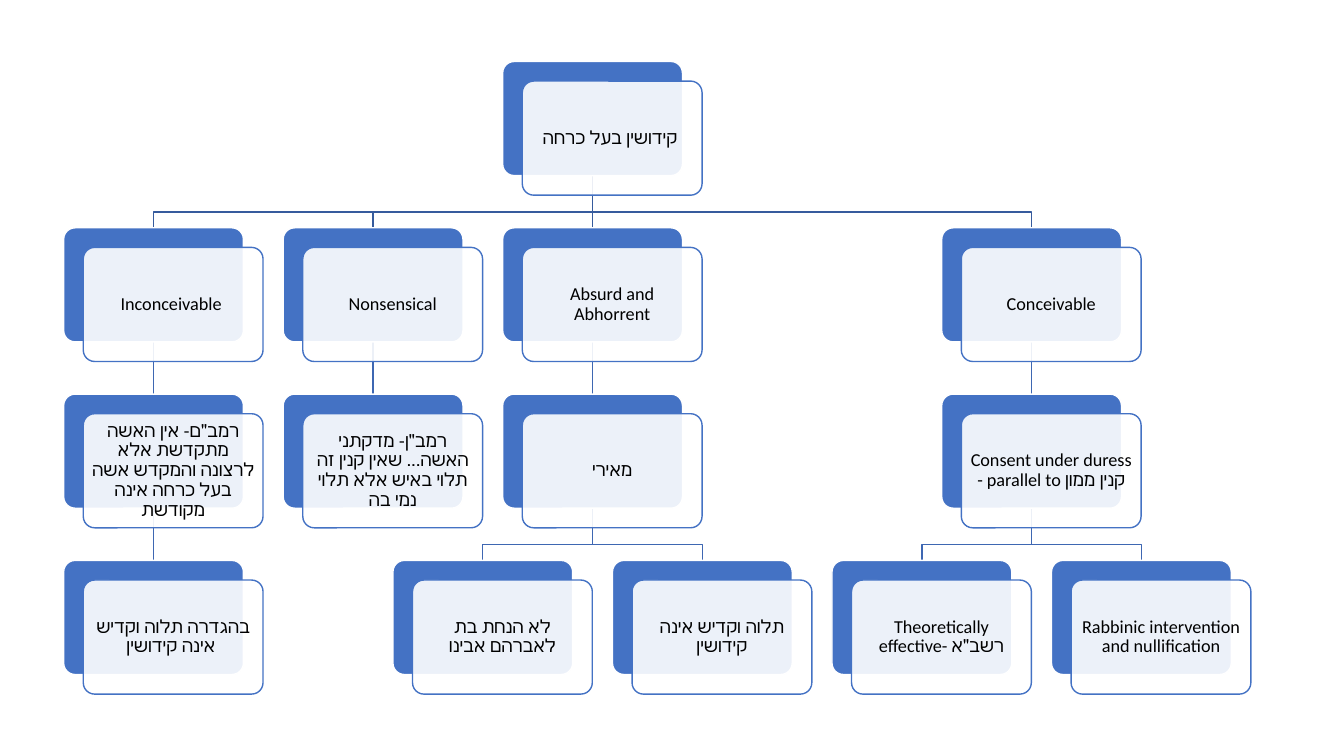
import pptx
import pptx.dml.color
import pptx.enum.shapes
import pptx.enum.text
import pptx.oxml
import pptx.oxml.ns
import pptx.util

Pt = pptx.util.Pt
SHAPE = pptx.enum.shapes.MSO_SHAPE

# Grid of cards: columns count in half steps
LEFT, TOP = 45.5, 43.9
HALF_STEP, ROW_STEP = 78.4, 118.8
CARD_W, CARD_H, OFFSET = 128.4, 81.5, 14
ELBOW = 26  # drop from a parent card to the horizontal branch

# (column, row, parent index, text runs as (text, font))
NODES = [
    (4, 0, None, [("קידושין בעל כרחה ", "Calibri")]),
    (0, 1, 0, [("Inconceivable ", "Calibri")]),
    (0, 2, 1, [('רמב"ם- אין האשה מתקדשת אלא לרצונה והמקדש אשה בעל כרחה אינה מקודשת', "Calibri")]),
    (0, 3, 2, [("בהגדרה תלוה וקדיש אינה קידושין ", "Calibri")]),
    (2, 1, 0, [("Nonsensical", "Calibri")]),
    (2, 2, 4, [('רמב"ן- ', "Calibri"),
               ("מדקתני האשה... שאין קנין זה תלוי באיש אלא תלוי נמי בה", "Arial")]),
    (4, 1, 0, [("Absurd and Abhorrent", "Calibri")]),
    (4, 2, 6, [("מאירי", "Calibri")]),
    (3, 3, 7, [("לא הנחת בת לאברהם אבינו", "Calibri")]),
    (5, 3, 7, [("תלוה וקדיש אינה קידושין", "Calibri")]),
    (8, 1, 0, [("Conceivable", "Calibri")]),
    (8, 2, 10, [("Consent under duress - parallel to קנין ממון", "Calibri")]),
    (7, 3, 11, [('Theoretically effective- רשב"א', "Calibri")]),
    (9, 3, 11, [("Rabbinic intervention and nullification", "Calibri")]),
]


def rgb(value):
    return pptx.dml.color.RGBColor.from_string(value)


def add_run(p, text, font="Calibri", size=13, color="000000"):
    r = p.add_run()
    r.text = text
    r.font.name, r.font.size = font, Pt(size)
    r.font.color.rgb = rgb(color)


class TreeSlide:
    blue, white = "4472C4", "FFFFFF"
    root_line, branch_line = "365B9D", "3E67B2"

    def __init__(self, s):
        self.s = s

    def corner(self, col, row):
        return LEFT + col * HALF_STEP, TOP + row * ROW_STEP

    def branch(self, parent, child):
        x1, y1 = self.corner(*parent)
        x2, y2 = self.corner(*child)
        x1, x2, y1 = x1 + CARD_W / 2, x2 + CARD_W / 2, y1 + CARD_H
        if x1 == x2:
            sp = self.s.shapes.add_connector(
                pptx.enum.shapes.MSO_CONNECTOR.STRAIGHT, Pt(x1), Pt(y1), Pt(x2), Pt(y2))
        else:
            path = self.s.shapes.build_freeform(Pt(x1), Pt(y1))
            points = [(x1, y1 + ELBOW), (x2, y1 + ELBOW), (x2, y2)]
            path.add_line_segments([(Pt(x), Pt(y)) for x, y in points], close=False)
            sp = path.convert_to_shape()
            sp.fill.background()
        sp.line.color.rgb = rgb(self.branch_line if parent[1] else self.root_line)
        sp.line.width = Pt(1)
        sp._element.spPr.get_or_add_ln()
        pptx.oxml.ns.qn("a:effectLst")
        sp._element.spPr.append(pptx.oxml.parse_xml(
            "<a:effectLst %s/>" % pptx.oxml.ns.nsdecls("a")))

    def rounded(self, x, y, fill, line):
        sp = self.s.shapes.add_shape(
            SHAPE.ROUNDED_RECTANGLE, Pt(x), Pt(y), Pt(CARD_W), Pt(CARD_H))
        sp.adjustments[0] = 0.1
        sp.shadow.inherit = False
        sp.fill.solid()
        sp.fill.fore_color.rgb = rgb(fill)
        sp.line.color.rgb = rgb(line)
        sp.line.width = Pt(1)
        return sp

    def card(self, col, row, runs):
        x, y = self.corner(col, row)
        self.rounded(x, y, self.blue, self.white)
        sp = self.rounded(x + OFFSET, y + OFFSET, self.white, self.blue)
        # Front card lets the blue one show through
        color = sp._element.spPr.find(".//" + pptx.oxml.ns.qn("a:srgbClr"))
        color.append(pptx.oxml.parse_xml(
            '<a:alpha %s val="90000"/>' % pptx.oxml.ns.nsdecls("a")))
        tf = sp.text_frame
        tf.word_wrap = True
        tf.vertical_anchor = pptx.enum.text.MSO_ANCHOR.MIDDLE
        # The rounded corners already inset the text by about 2.4 pt
        tf.margin_left = tf.margin_right = tf.margin_top = tf.margin_bottom = Pt(3.6)
        p = tf.paragraphs[0]
        p.alignment = pptx.enum.text.PP_ALIGN.CENTER
        p.line_spacing = 0.9
        p.space_after = Pt(4.5)
        for text, font in runs:
            add_run(p, text, font=font)


def main():
    prs = pptx.Presentation()
    prs.slide_width, prs.slide_height = Pt(960), Pt(540)
    tree = TreeSlide(prs.slides.add_slide(prs.slide_layouts[6]))

    # Branches lie behind the cards
    for col, row, parent, _ in NODES:
        if parent is not None:
            tree.branch(NODES[parent][:2], (col, row))

    # Cards
    for col, row, _, runs in NODES:
        tree.card(col, row, runs)

    prs.save("out.pptx")


if __name__ == "__main__":
    main()
